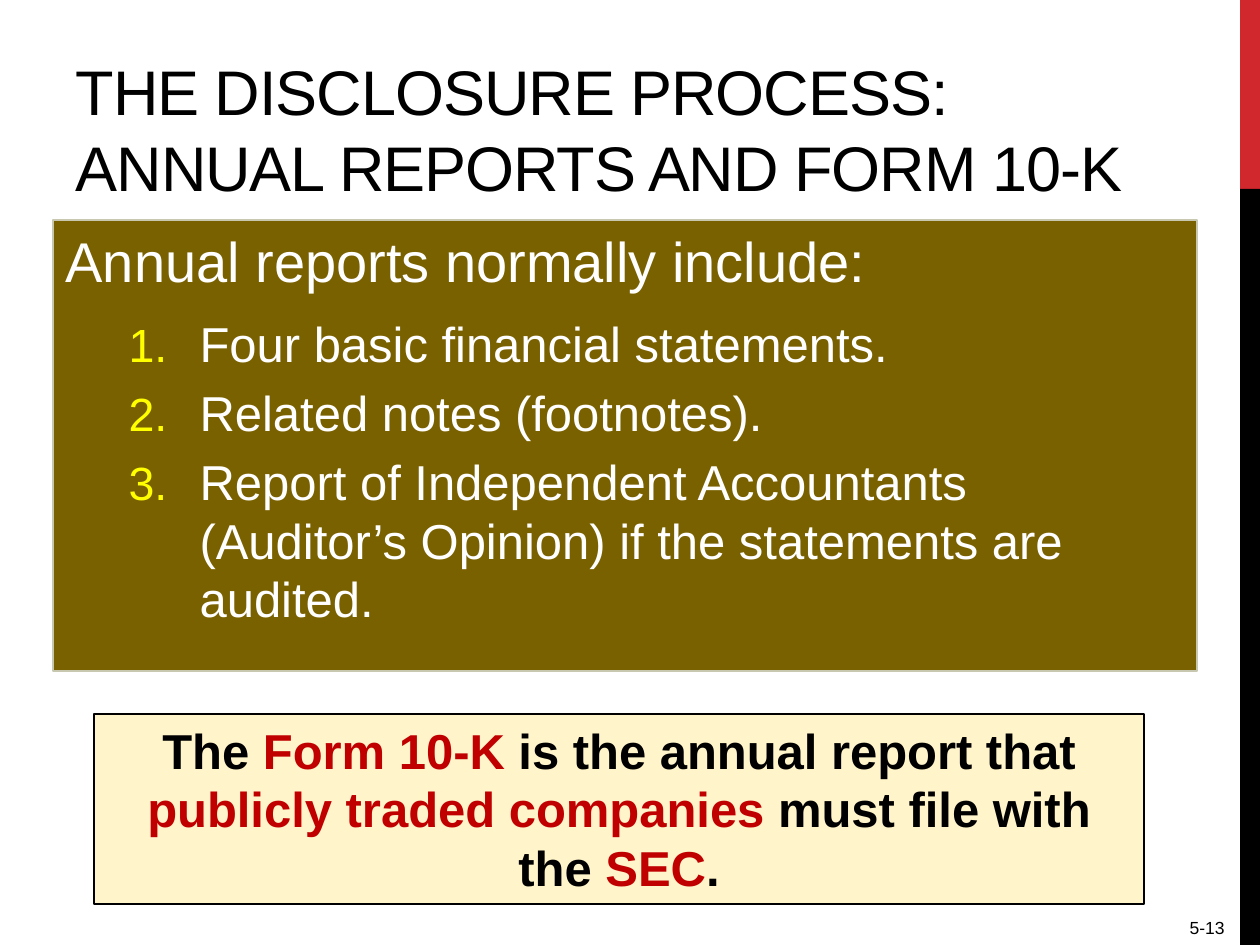
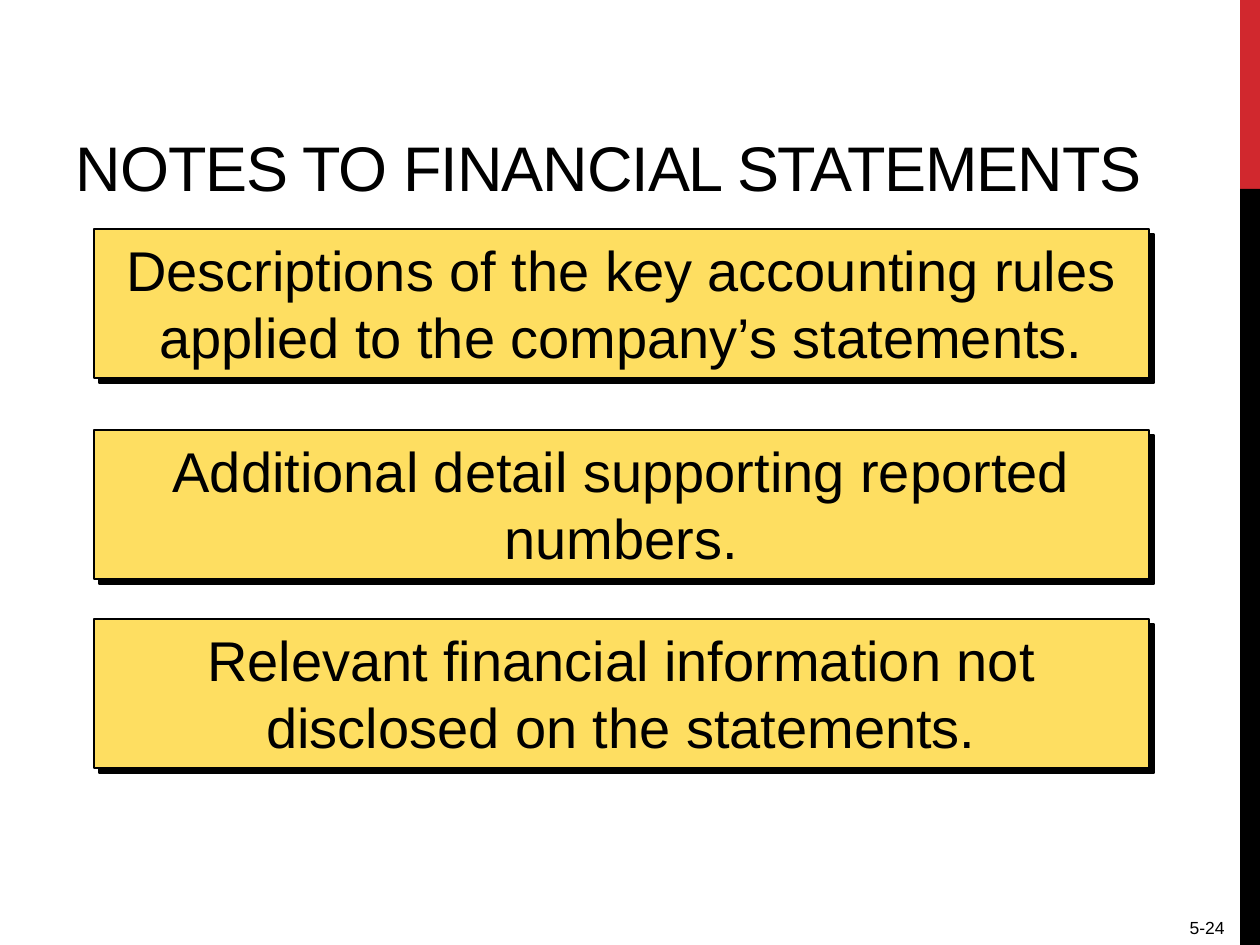
"""Build two slides on annual reports and the notes to financial statements."""
from copy import deepcopy
from dataclasses import dataclass

from pptx import Presentation
from pptx import util as u
from pptx.dml.color import RGBColor
from pptx.enum import shapes, text
from pptx.oxml import ns, xmlchemy as xml

RED = RGBColor(0xD1, 0x28, 0x2E)
BLACK = RGBColor(0, 0, 0)
WHITE = RGBColor(255, 255, 255)
OLIVE = RGBColor(0x7A, 0x61, 0x00)
STONE = RGBColor(0xC8, 0xC8, 0xB1)
CREAM = RGBColor(0xFF, 0xF4, 0xCA)
GOLD = RGBColor(0xFE, 0xDE, 0x61)
YELLOW = RGBColor(255, 255, 0)
CRIMSON = RGBColor(0xC0, 0, 0)
FONT = "Arial"
SCALE = 914400 / 126


@dataclass(frozen=True)
class Box:
    left: int
    top: int
    width: int
    height: int

    def emu(self) -> list[u.Emu]:
        return [px(n) for n in (self.left, self.top, self.width, self.height)]


@dataclass(frozen=True)
class Style:
    size: int
    color: RGBColor = BLACK
    bold: bool = False


@dataclass(frozen=True)
class Panel:
    box: Box
    fill: RGBColor
    edge: float
    shadow: bool = False


BARS = ((Box(1240, 0, 20, 189), RED), (Box(1240, 189, 20, 756), BLACK))
TITLE = Box(63, 21, 1155, 189)
LIST = Box(53, 220, 1144, 451)
FORM = Panel(Box(94, 714, 1050, 190), CREAM, 0.75)
PAGE = Box(1177, 911, 60, 34)
STRONG = Style(28, BLACK, True)
ACCENT = Style(28, CRIMSON, True)

ITEMS = (
    "Four basic financial statements.",
    "Related notes (footnotes).",
    "Report of Independent Accountants (Auditor’s Opinion) if the statements are audited.",
)
CLAIM = (
    ("The ", STRONG),
    ("Form 10-K ", ACCENT),
    ("is the annual report that ", STRONG),
    ("publicly traded companies", ACCENT),
    (" must file with the ", STRONG),
    ("SEC", ACCENT),
    (".", STRONG),
)
NOTES = (
    (229, "Descriptions of the key accounting rules applied to the company’s statements."),
    (430, "Additional detail supporting reported numbers."),
    (619, "Relevant financial information not disclosed on the statements."),
)


def px(n: int) -> u.Emu:
    return u.Emu(round(n * SCALE))


def place(shape, box: Box) -> None:
    shape.left, shape.top, shape.width, shape.height = box.emu()


def child(parent, tag: str, **attrs):
    node = xml.OxmlElement(tag)
    for key, value in attrs.items():
        node.set(key, str(value))
    parent.append(node)
    return node


def put(para, words: str, style: Style):
    run = para.add_run()
    run.text = words
    run.font.name = FONT
    run.font.size = u.Pt(style.size)
    run.font.bold = style.bold
    run.font.color.rgb = style.color
    return run


def indent(para, left: int, hang: int):
    props = para._p.get_or_add_pPr()
    props.set("marL", str(px(left)))
    props.set("indent", str(px(-hang)))
    return props


def head(slide, words: str) -> None:
    title = slide.shapes.title
    place(title, TITLE)
    frame = title.text_frame
    frame.auto_size = text.MSO_AUTO_SIZE.NONE
    frame.vertical_anchor = text.MSO_ANCHOR.BOTTOM
    para = frame.paragraphs[0]
    para.alignment = text.PP_ALIGN.LEFT
    for i, line in enumerate(words.split("\n")):
        if i:
            para.add_line_break()
        run = put(para, line, Style(36))
        run.font._element.set("spc", "-60")
    for gap in para._p.findall(ns.qn("a:br")):
        gap.append(deepcopy(run.font._element))


def rect(slide, box: Box, fill: RGBColor):
    shape = slide.shapes.add_shape(shapes.MSO_SHAPE.RECTANGLE, *box.emu())
    shape.shadow.inherit = False
    shape.fill.solid()
    shape.fill.fore_color.rgb = fill
    shape.line.fill.background()
    return shape


def panel(slide, spec: Panel, parts: tuple[tuple[str, Style], ...]) -> None:
    shape = rect(slide, spec.box, spec.fill)
    shape.line.color.rgb = BLACK
    shape.line.width = u.Pt(spec.edge)
    if spec.shadow:
        effect = shape._element.spPr.find(ns.qn("a:effectLst"))
        shade = child(effect, "a:outerShdw", dist=u.Pt(4.2), dir=2700000,
                      algn="ctr", rotWithShape=0)
        child(shade, "a:srgbClr", val=BLACK)
    frame = shape.text_frame
    frame.word_wrap = True
    frame.auto_size = text.MSO_AUTO_SIZE.SHAPE_TO_FIT_TEXT
    frame.vertical_anchor = text.MSO_ANCHOR.TOP
    para = frame.paragraphs[0]
    para.alignment = text.PP_ALIGN.CENTER
    for words, style in parts:
        put(para, words, style)


def listing(slide, lead: str, items: tuple[str, ...]) -> None:
    body = slide.placeholders[1]
    place(body, LIST)
    body.fill.solid()
    body.fill.fore_color.rgb = OLIVE
    body.line.color.rgb = STONE
    body.line.width = u.Pt(0.75)
    frame = body.text_frame
    frame.auto_size = text.MSO_AUTO_SIZE.NONE
    para = frame.paragraphs[0]
    para.space_after = u.Pt(6)
    child(indent(para, 0, 0), "a:buNone")
    put(para, lead, Style(32, WHITE))
    for item in items:
        para = frame.add_paragraph()
        para.level = 1
        props = indent(para, 134, 71)
        child(child(props, "a:buClr"), "a:srgbClr", val=YELLOW)
        child(props, "a:buSzPct", val=95000)
        child(props, "a:buFont", typeface=FONT)
        child(props, "a:buAutoNum", type="arabicPeriod")
        put(para, item, Style(28, WHITE))


def start(deck, layout: int, title: str, page: str):
    slide = deck.slides.add_slide(deck.slide_layouts[layout])
    for box, fill in BARS:
        rect(slide, box, fill)
    head(slide, title)
    frame = slide.shapes.add_textbox(*PAGE.emu()).text_frame
    frame.word_wrap = False
    frame.auto_size = text.MSO_AUTO_SIZE.SHAPE_TO_FIT_TEXT
    para = frame.paragraphs[0]
    para.alignment = text.PP_ALIGN.RIGHT
    put(para, page, Style(10))
    return slide


def main() -> None:
    deck = Presentation()
    deck.slide_width, deck.slide_height = px(1260), px(945)

    slide = start(deck, 1, "THE DISCLOSURE PROCESS:\nANNUAL REPORTS AND FORM 10-K", "5-13")
    listing(slide, "Annual reports normally include:", ITEMS)
    panel(slide, FORM, CLAIM)

    slide = start(deck, 5, "NOTES TO FINANCIAL STATEMENTS", "5-24")
    for top, words in NOTES:
        card = Panel(Box(94, top, 1055, 149), GOLD, 1, True)
        panel(slide, card, ((words, Style(32)),))

    deck.save("out.pptx")


if __name__ == "__main__":
    main()
